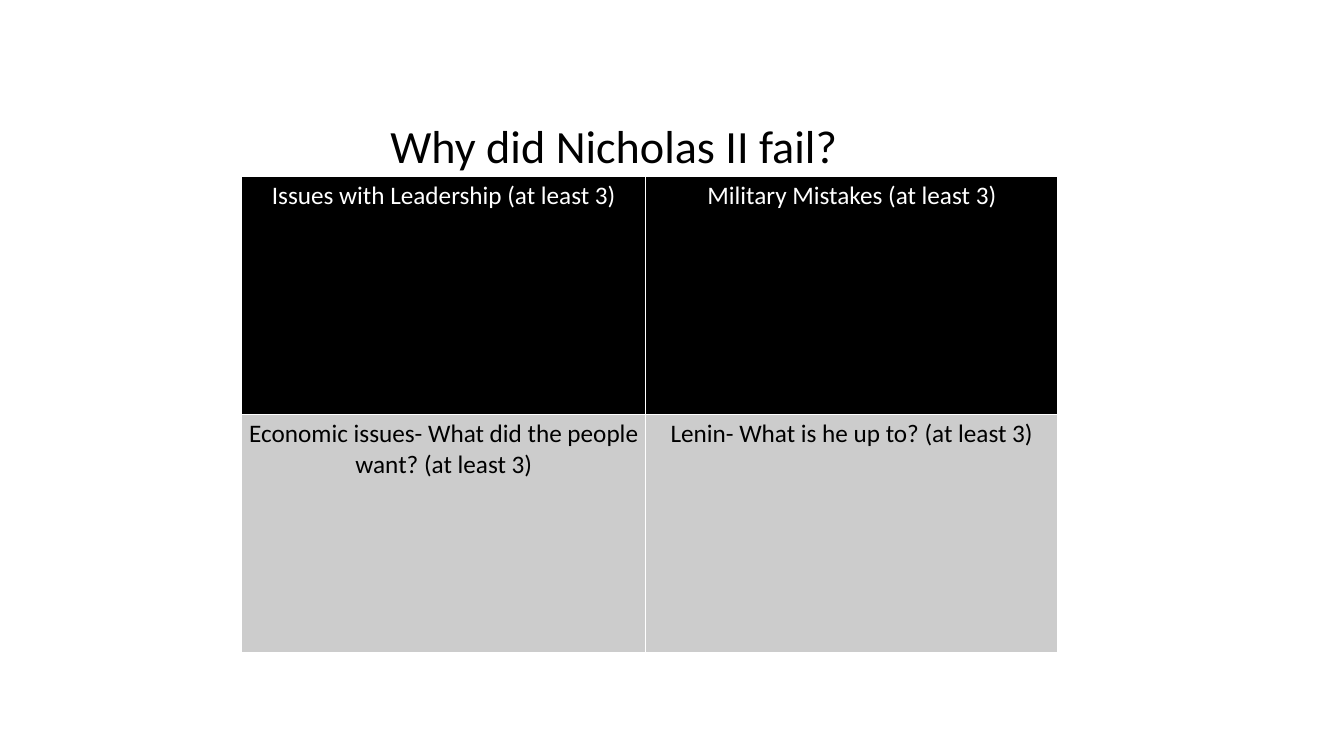
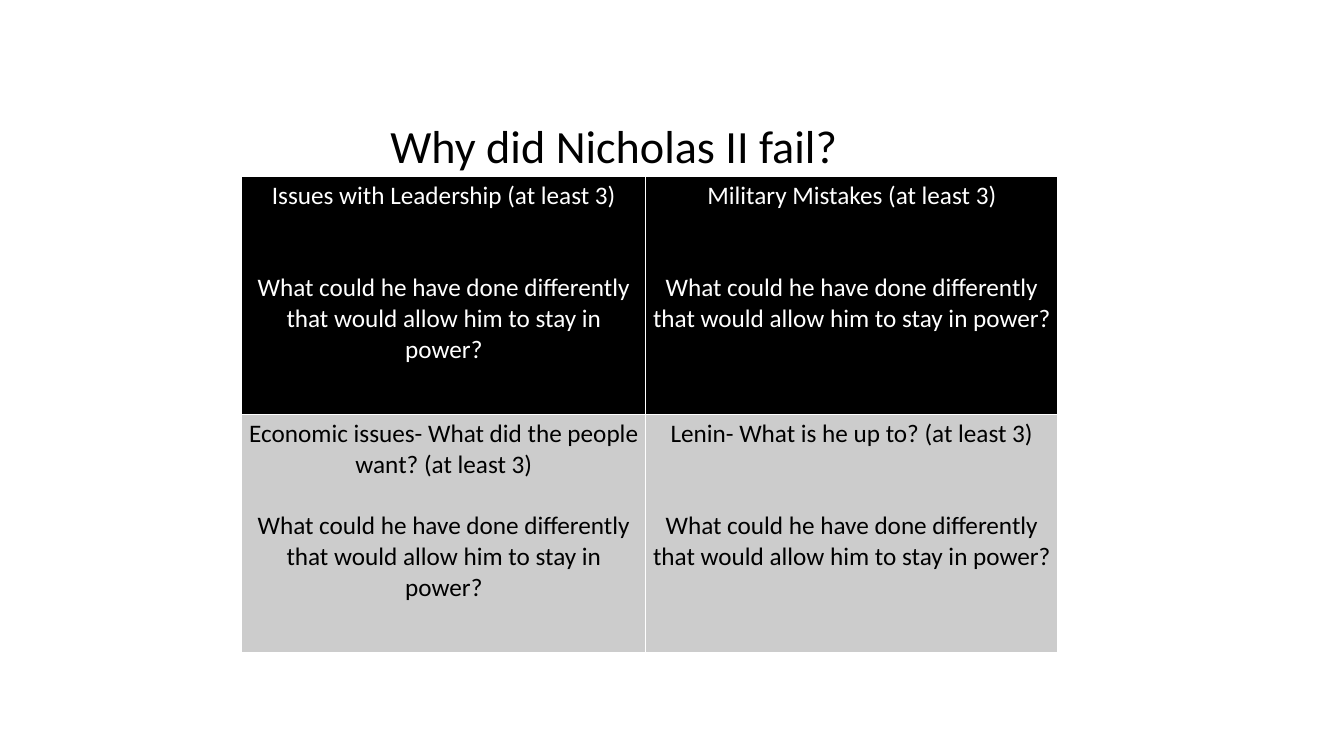
import dataclasses

import pptx
import pptx.dml.color
import pptx.enum.text
import pptx.oxml
import pptx.oxml.ns
import pptx.util


@dataclasses.dataclass(frozen=True)
class Theme:
    font: str = "Calibri"
    title_size: int = 33
    body_size: int = 18
    line_height: int = 22
    black: str = "000000"
    white: str = "FFFFFF"
    grey: str = "CCCCCC"
    border_width: int = 1


@dataclasses.dataclass(frozen=True)
class Box:
    """A region in percent of the slide's width and height."""
    left: float
    top: float
    width: float
    height: float

    def on(self, presentation):
        column = presentation.slide_width / 100
        row = presentation.slide_height / 100
        return (int(self.left * column), int(self.top * row),
                int(self.width * column), int(self.height * row))


THEME = Theme()
TITLE_BOX = Box(21.9, 14.93, 47.56, 8.8)
TABLE_BOX = Box(18, 23.33, 60.72, 62.93)
COLUMN_PERCENTS = (49.5, 50.5)

TITLE = "Why did Nicholas II fail?"
FOLLOW_UP = "What could he have done differently that would allow him to stay in power?"
# Each topic comes with the number of free lines left before its follow-up.
TOPICS = (
    (("Issues with Leadership (at least 3)", 2), ("Military Mistakes (at least 3)", 2)),
    (("Economic issues- What did the people want? (at least 3)", 1),
     ("Lenin- What is he up to? (at least 3)", 2)),
)
ROW_COLOURS = ((THEME.black, THEME.white), (THEME.grey, THEME.black))


def rgb(colour):
    return pptx.dml.color.RGBColor.from_string(colour)


def format_paragraph(paragraph, size, colour):
    paragraph.alignment = pptx.enum.text.PP_ALIGN.CENTER
    for run in paragraph.runs:
        run.font.name = THEME.font
        run.font.size = pptx.util.Pt(size)
        run.font.bold = False
        run.font.color.rgb = rgb(colour)


def add_title(slide, box):
    frame = slide.shapes.add_textbox(*box).text_frame
    frame.word_wrap = True
    frame.text = TITLE
    format_paragraph(frame.paragraphs[0], THEME.title_size, THEME.black)


def set_borders(cell):
    properties = cell._tc.get_or_add_tcPr()
    width = pptx.util.Pt(THEME.border_width)
    for position, side in enumerate(("lnL", "lnR", "lnT", "lnB")):
        properties.insert(position, pptx.oxml.parse_xml(
            f'<a:{side} {pptx.oxml.ns.nsdecls("a")} w="{width}"><a:solidFill>'
            f'<a:srgbClr val="{THEME.white}"/></a:solidFill></a:{side}>'))


def fill_cell(cell, topic, free_lines, colours, with_follow_up):
    background, text_colour = colours
    cell.margin_left = cell.margin_right = pptx.util.Inches(0.07)
    cell.margin_top = cell.margin_bottom = pptx.util.Inches(0.04)
    cell.fill.solid()
    cell.fill.fore_color.rgb = rgb(background)
    set_borders(cell)
    cell.text_frame.text = topic
    if with_follow_up:
        paragraph = cell.text_frame.add_paragraph()
        paragraph.text = FOLLOW_UP
        paragraph.space_before = pptx.util.Pt(free_lines * THEME.line_height)
    for paragraph in cell.text_frame.paragraphs:
        format_paragraph(paragraph, THEME.body_size, text_colour)


def add_topic_table(slide, box, with_follow_up):
    left, top, width, height = box
    table = slide.shapes.add_table(len(TOPICS), len(COLUMN_PERCENTS), *box).table
    table.first_row = table.horz_banding = False
    for column, percent in zip(table.columns, COLUMN_PERCENTS):
        column.width = int(width * percent / 100)
    for row, topics, colours in zip(table.rows, TOPICS, ROW_COLOURS):
        row.height = height // len(TOPICS)
        for cell, (topic, free_lines) in zip(row.cells, topics):
            fill_cell(cell, topic, free_lines, colours, with_follow_up)


def add_question_slide(presentation, with_follow_up):
    slide = presentation.slides.add_slide(presentation.slide_layouts[6])
    add_topic_table(slide, TABLE_BOX.on(presentation), with_follow_up)
    add_title(slide, TITLE_BOX.on(presentation))


def main():
    presentation = pptx.Presentation()
    presentation.slide_width = pptx.util.Inches(13.33)
    presentation.slide_height = pptx.util.Inches(7.5)
    for with_follow_up in (False, True):
        add_question_slide(presentation, with_follow_up)
    presentation.save("out.pptx")


if __name__ == "__main__":
    main()
